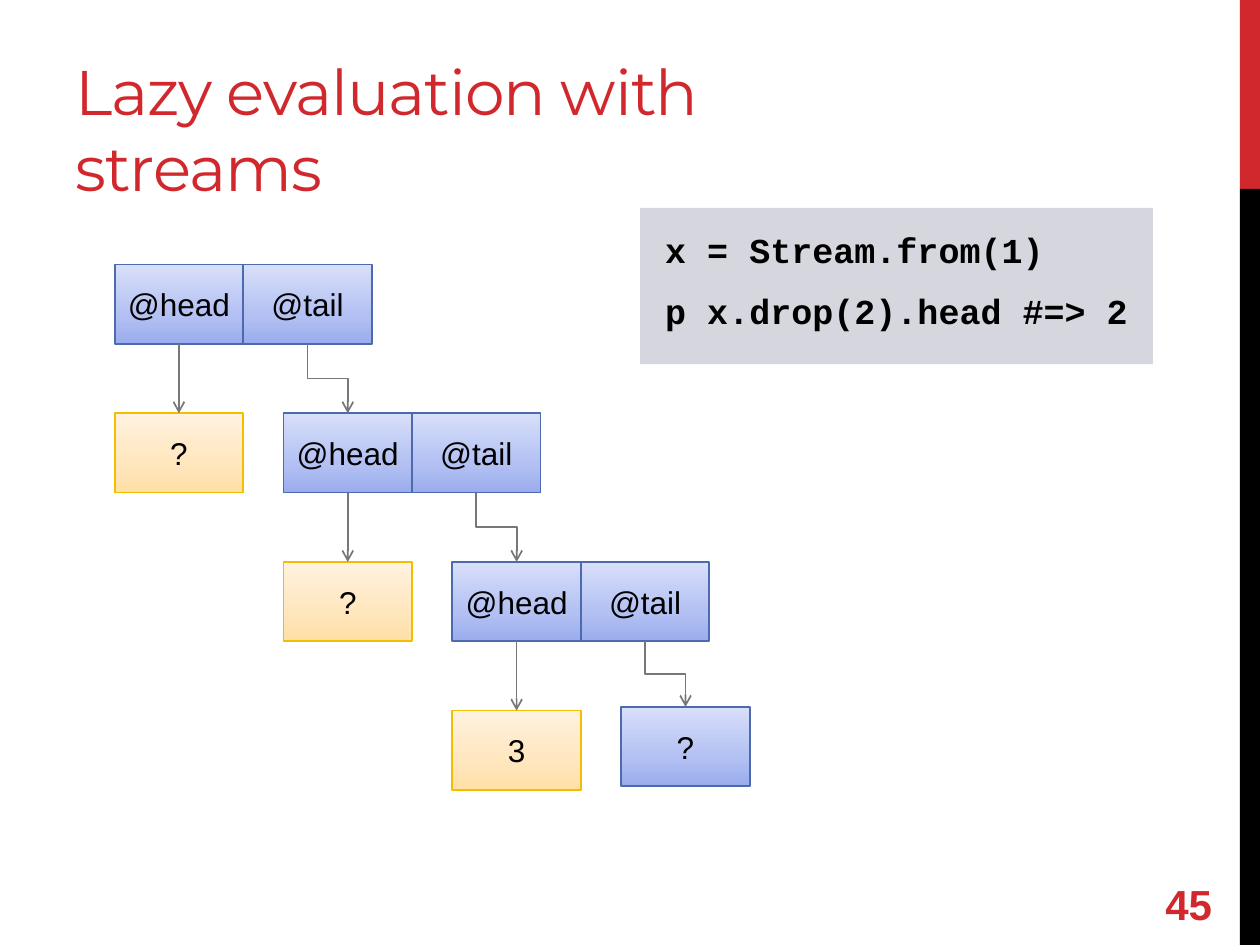
import copy
import pptx
import pptx.util
import pptx.dml.color
import pptx.enum.shapes
import pptx.enum.text
import pptx.oxml
import pptx.oxml.ns

Inches, Pt = pptx.util.Inches, pptx.util.Pt
RGB = pptx.dml.color.RGBColor.from_string
ANCHOR = pptx.enum.text.MSO_ANCHOR
RECTANGLE = pptx.enum.shapes.MSO_SHAPE.RECTANGLE
LINK = pptx.enum.shapes.MSO_CONNECTOR

COLORS = {"red": "D1282E", "black": "000000", "code": "D6D7DE", "arrow": "777777"}
CELLS = {
    "blue": ("4E6AAE", ["9AACED", "B2C0F3", "D8DFF9"]),
    "yellow": ("F1BE00", ["FFDFA5", "FFE6BD", "FFF2DF"]),
}
LEFT, TOP, COLUMN, ROW = 0.91, 2.1, 1.34, 1.18
CELL_W, CELL_H = 1.02, 0.63

deck = pptx.Presentation()
deck.slide_width, deck.slide_height = Inches(10), Inches(7.5)
page = deck.slides.add_slide(deck.slide_layouts[5])


def add_box(x, y, width, height, color=None):
    box = page.shapes.add_shape(RECTANGLE, Inches(x), Inches(y), Inches(width), Inches(height))
    box.shadow.inherit = False
    box.line.fill.background()
    if color:
        box.fill.solid()
        box.fill.fore_color.rgb = RGB(COLORS[color])
    return box


def add_text(para, text, font, size, color, bold=False):
    span = para.add_run()
    span.text = text
    span.font.name = font
    span.font.size = Pt(size)
    span.font.bold = bold
    span.font.color.rgb = RGB(COLORS[color])
    return span


add_box(9.84, 0, 0.16, 1.5, "red")
add_box(9.84, 1.5, 0.16, 6, "black")

title = page.shapes.title
title.left, title.top, title.width, title.height = Inches(0.5), Inches(0.17), Inches(6.33), Inches(1.5)
title.text_frame.word_wrap = True
title.text_frame.auto_size = pptx.enum.text.MSO_AUTO_SIZE.NONE
title.text_frame.vertical_anchor = ANCHOR.BOTTOM
para = title.text_frame.paragraphs[0]
para.alignment = pptx.enum.text.PP_ALIGN.LEFT
span = add_text(para, "Lazy evaluation with streams", "Montserrat", 36, "red")
span.font._element.set("spc", "-60")

cells = []
for level, value in enumerate(["?", "?", "3"]):
    x, y = LEFT + level * COLUMN, TOP + level * ROW
    cells += [
        (x, y, "@head", "blue"),
        (x + CELL_W, y, "@tail", "blue"),
        (x, y + ROW, value, "yellow"),
    ]
cells.append((LEFT + 3 * COLUMN, 5.61, "?", "blue"))

for x, y, label, style in cells:
    box = add_box(x, y, CELL_W, CELL_H)
    outline, shades = CELLS[style]
    box.line.color.rgb = RGB(outline)
    box.line.width = Pt(1)
    box.fill.gradient()
    box.fill.gradient_angle = 90
    first = box._element.spPr.find(".//" + pptx.oxml.ns.qn("a:gs"))
    first.addnext(copy.deepcopy(first))
    for stop, shade, position in zip(box.fill.gradient_stops, shades, [0, 0.35, 1]):
        stop.color.rgb = RGB(shade)
        stop.position = position
    frame = box.text_frame
    frame.margin_left = frame.margin_right = Inches(0.05)
    frame.vertical_anchor = ANCHOR.MIDDLE
    para = frame.paragraphs[0]
    para.alignment = pptx.enum.text.PP_ALIGN.CENTER
    add_text(para, label, "Arial", 18, "black")

arrows = []
for level in range(3):
    x = LEFT + level * COLUMN + CELL_W / 2
    y = TOP + level * ROW + CELL_H
    drop = ROW - CELL_H
    arrows.append(page.shapes.add_connector(LINK.STRAIGHT, Inches(x), Inches(y), Inches(x), Inches(y + drop)))
    if level == 2:
        drop = 5.61 - y
    shift = COLUMN - CELL_W
    middle_x, middle_y = x + CELL_W + shift / 2, y + drop / 2
    elbow = page.shapes.add_connector(
        LINK.ELBOW,
        Inches(middle_x + drop / 2), Inches(middle_y - shift / 2),
        Inches(middle_x - drop / 2), Inches(middle_y + shift / 2),
    )
    elbow._element.spPr.find(pptx.oxml.ns.qn("a:xfrm")).set("rot", "16200000")
    arrows.append(elbow)

for arrow in arrows:
    arrow.line.color.rgb = RGB(COLORS["arrow"])
    arrow.line.width = Pt(1)
    namespace = pptx.oxml.ns.nsdecls("a")
    arrow.line._get_or_add_ln().append(pptx.oxml.parse_xml(f'<a:tailEnd {namespace} type="arrow"/>'))
    arrow._element.spPr.append(pptx.oxml.parse_xml(f"<a:effectLst {namespace}/>"))

frame = add_box(5.08, 1.65, 4.07, 1.24, "code").text_frame
frame.word_wrap = True
frame.vertical_anchor = ANCHOR.TOP
frame.margin_left, frame.margin_right = Inches(0.2), Inches(0.1)
frame.margin_top, frame.margin_bottom = Inches(0.16), Inches(0.08)
for index, code in enumerate(["x = Stream.from(1)", "p x.drop(2).head #=> 2"]):
    para = frame.add_paragraph() if index else frame.paragraphs[0]
    para.alignment = pptx.enum.text.PP_ALIGN.LEFT
    para.space_before, para.space_after = Pt(5), Pt(6)
    add_text(para, code, "Courier New", 20, "black", True)

number = page.shapes.add_textbox(Inches(9.15), Inches(6.97), Inches(1.44), Inches(0.4))
number.text_frame.word_wrap = True
number.text_frame.vertical_anchor = ANCHOR.MIDDLE
add_text(number.text_frame.paragraphs[0], "45", "Arial", 24, "red", True)

deck.save("out.pptx")
